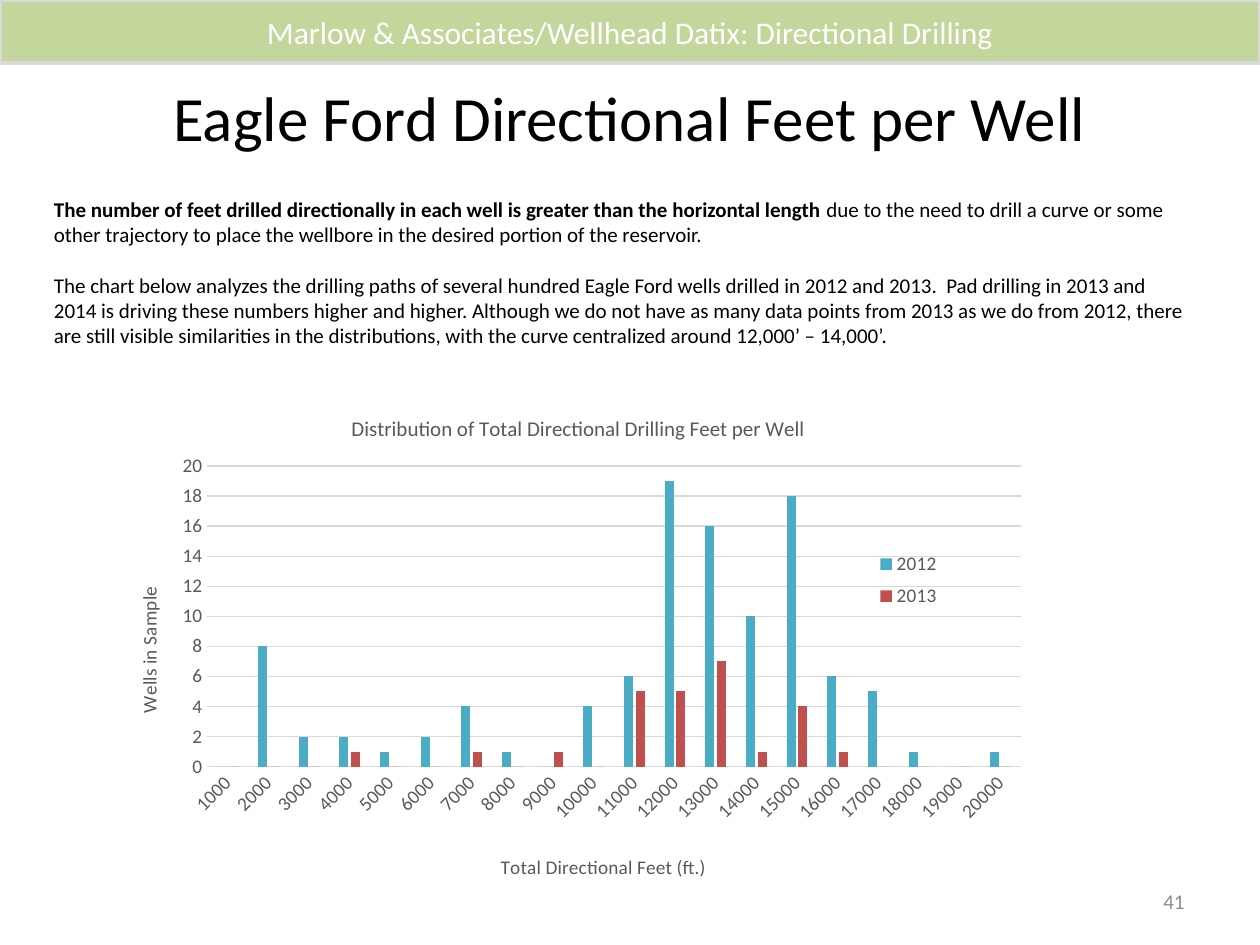
from lxml import etree
from pptx import Presentation
from pptx.chart.data import CategoryChartData
from pptx.dml.color import RGBColor
from pptx.enum.chart import XL_CHART_TYPE, XL_LEGEND_POSITION, XL_TICK_MARK
from pptx.enum.shapes import MSO_SHAPE
from pptx.enum.text import MSO_ANCHOR, PP_ALIGN
from pptx.oxml.ns import qn
from pptx.util import Inches, Pt

FONT = "Calibri"
BLACK = RGBColor(0x00, 0x00, 0x00)
WHITE = RGBColor(0xFF, 0xFF, 0xFF)
GREEN = RGBColor(0xC3, 0xD6, 0x9B)
LIGHT_GRAY = RGBColor(0xD9, 0xD9, 0xD9)
NUMBER_GRAY = RGBColor(0x8C, 0x8C, 0x8C)
CHART_GRAY = RGBColor(0x59, 0x59, 0x59)
TEAL = RGBColor(0x4B, 0xAC, 0xC6)
RED = RGBColor(0xC0, 0x50, 0x4D)
CENTER, RIGHT = PP_ALIGN.CENTER, PP_ALIGN.RIGHT
MIDDLE = MSO_ANCHOR.MIDDLE
RECTANGLE = MSO_SHAPE.RECTANGLE
CLUSTERED = XL_CHART_TYPE.COLUMN_CLUSTERED
LEGEND_BOTTOM = XL_LEGEND_POSITION.BOTTOM
NO_TICKS = XL_TICK_MARK.NONE


def style_font(font, size, color):
    font.name = FONT
    font.size = Pt(size)
    font.bold = False
    font.color.rgb = color


def place(element, before, **fractions):
    """Fix a chart part at fractions of the chart; its layout follows the child named before."""
    for old in element.findall(qn("c:layout")):
        element.remove(old)
    layout = etree.Element(qn("c:layout"))
    manual = etree.SubElement(layout, qn("c:manualLayout"))
    if before is None:
        etree.SubElement(manual, qn("c:layoutTarget")).set("val", "inner")
        element.insert(0, layout)
    else:
        element.find(qn(before)).addnext(layout)
    for mode in ("xMode", "yMode"):
        etree.SubElement(manual, qn(f"c:{mode}")).set("val", "edge")
    for name, value in fractions.items():
        etree.SubElement(manual, qn(f"c:{name}")).set("val", str(value))


deck = Presentation()
deck.slide_width = Inches(10)
deck.slide_height = Inches(7.5)
page = deck.slides.add_slide(deck.slide_layouts[6])

# Title and page number
for text, left, top, width, height, size, color, align in (
    ("Eagle Ford Directional Feet per Well", 0.33, 0.3, 9.33, 1.25, 36, BLACK, CENTER),
    ("41", 7.17, 6.95, 2.33, 0.4, 12, NUMBER_GRAY, RIGHT),
):
    box = page.shapes.add_textbox(Inches(left), Inches(top), Inches(width), Inches(height))
    box.text_frame.word_wrap = True
    box.text_frame.vertical_anchor = MIDDLE
    para = box.text_frame.paragraphs[0]
    para.text = text
    para.alignment = align
    style_font(para.font, size, color)

# Body text
body = page.shapes.add_textbox(Inches(0.33), Inches(1.51), Inches(9.17), Inches(1.31))
body.text_frame.word_wrap = True
para = body.text_frame.paragraphs[0]
para.space_after = Pt(14.4)
style_font(para.font, 12, BLACK)
span = para.add_run()
span.text = "The number of feet drilled directionally in each well is greater than the horizontal length "
span.font.bold = True
para.add_run().text = (
    "due to the need to drill a curve or some other trajectory to place the wellbore "
    "in the desired portion of the reservoir."
)
para = body.text_frame.add_paragraph()
para.text = (
    "The chart below analyzes the drilling paths of several hundred Eagle Ford wells drilled "
    "in 2012 and 2013.  Pad drilling in 2013 and 2014 is driving these numbers higher and higher. "
    "Although we do not have as many data points from 2013 as we do from 2012, there are still "
    "visible similarities in the distributions, with the curve centralized around 12,000’ – 14,000’."
)
style_font(para.font, 12, BLACK)

# Header band
band = page.shapes.add_shape(RECTANGLE, 0, 0, Inches(10), Inches(0.5))
band.shadow.inherit = False
band.fill.solid()
band.fill.fore_color.rgb = GREEN
band.line.color.rgb = LIGHT_GRAY
band.line.width = Pt(2)
band.text_frame.vertical_anchor = MIDDLE
para = band.text_frame.paragraphs[0]
para.text = "Marlow & Associates/Wellhead Datix: Directional Drilling"
para.alignment = CENTER
style_font(para.font, 18, WHITE)

# Distribution chart
wells = CategoryChartData()
wells.categories = range(1000, 21000, 1000)
wells.add_series("2012", (0, 8, 2, 2, 1, 2, 4, 1, 0, 4, 6, 19, 16, 10, 18, 6, 5, 1, 0, 1))
wells.add_series("2013", (0, 0, 0, 1, 0, 0, 1, 0, 1, 0, 5, 5, 7, 1, 4, 1, 0, 0, 0, 0))
chart = page.shapes.add_chart(
    CLUSTERED, Inches(0.83), Inches(3.08), Inches(7.42), Inches(4.42), wells
).chart
style_font(chart.font, 10, BLACK)
plot = chart.plots[0]
plot.gap_width = 219
plot.overlap = -27
plot.vary_by_categories = False
for series, color in zip(plot.series, (TEAL, RED)):
    series.format.fill.solid()
    series.format.fill.fore_color.rgb = color
place(chart.element.find(f".//{qn('c:plotArea')}"), None, x=0.11, y=0.14, w=0.87, h=0.54)

# Axes
feet_axis, wells_axis = chart.category_axis, chart.value_axis
for axis in (feet_axis, wells_axis):
    axis.major_tick_mark = NO_TICKS
    axis.minor_tick_mark = NO_TICKS
    style_font(axis.tick_labels.font, 11, CHART_GRAY)
feet_axis.tick_labels.number_format = "#,##0"
feet_axis.tick_labels.number_format_is_linked = False
feet_axis.format.line.color.rgb = LIGHT_GRAY
feet_axis.format.line.width = Pt(0.75)
feet_labels = chart.element.find(f".//{qn('c:catAx')}/{qn('c:txPr')}/{qn('a:bodyPr')}")
feet_labels.set("rot", "-2700000")
wells_axis.minimum_scale = 0
wells_axis.maximum_scale = 20
wells_axis.major_unit = 2
wells_axis.format.line.fill.background()
gridline = wells_axis.major_gridlines.format.line
gridline.color.rgb = LIGHT_GRAY
gridline.width = Pt(0.75)

# Chart and axis titles
for title, text, size, turn, x, y in (
    (chart.chart_title, "Distribution of Total Directional Drilling Feet per Well", 12, 0, 0.26, 0.04),
    (feet_axis.axis_title, "Total Directional Feet (ft.)", 11, 0, 0.42, 0.83),
    (wells_axis.axis_title, "Wells in Sample", 11, -5400000, 0.03, 0.35),
):
    para = title.text_frame.paragraphs[0]
    para.text = text
    style_font(para.font, size, CHART_GRAY)
    title.element.find(f".//{qn('a:bodyPr')}").set("rot", str(turn))
    place(title.element, "c:tx", x=x, y=y)

# Legend
chart.has_legend = True
chart.legend.position = LEGEND_BOTTOM
chart.legend.include_in_layout = False
style_font(chart.legend.font, 11, CHART_GRAY)
place(chart.element.find(f".//{qn('c:legend')}"), "c:legendPos", x=0.82, y=0.28, w=0.08, h=0.13)

deck.save("out.pptx")
